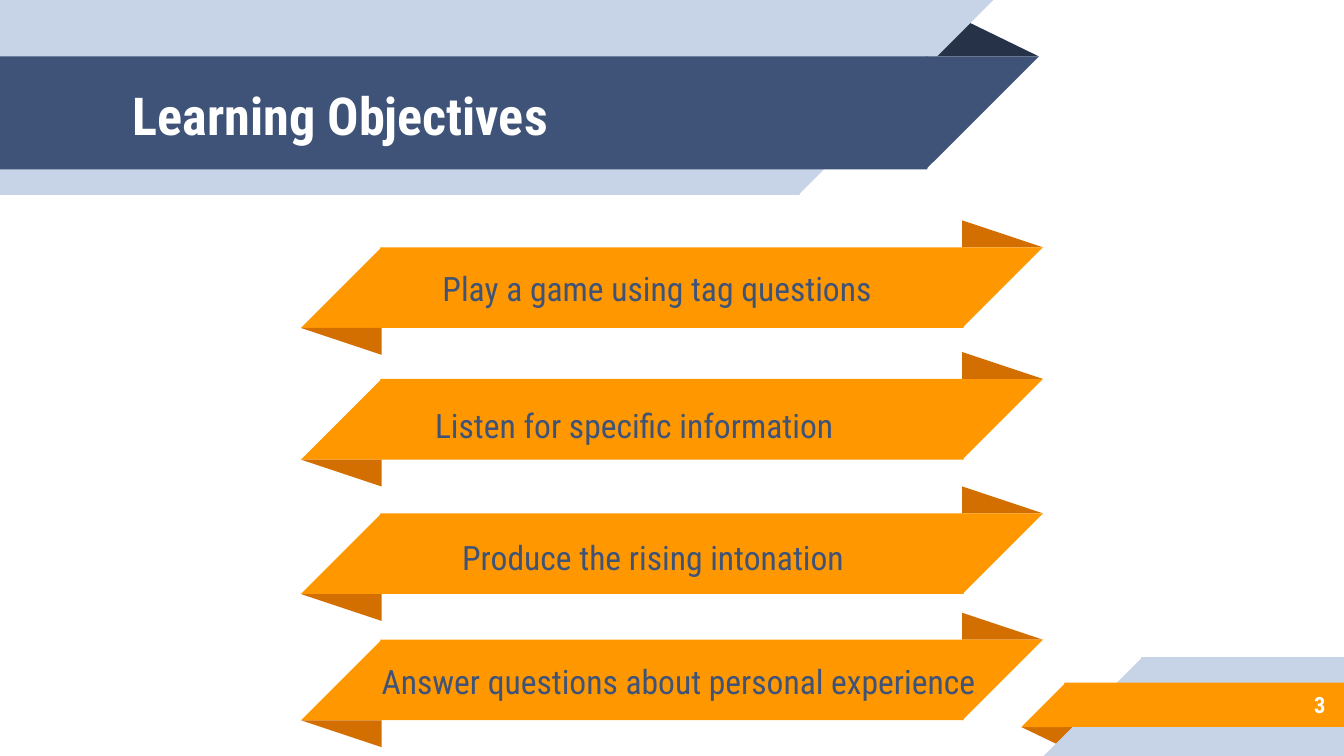
from pptx import Presentation
from pptx.dml.color import RGBColor
from pptx.enum.shapes import MSO_SHAPE as SHAPE
from pptx.enum.text import MSO_ANCHOR as ANCHOR, PP_ALIGN as ALIGN
from pptx.util import Inches, Pt

COLORS = {
    "navy": "3F5378",
    "dark_navy": "263248",
    "pale_blue": "C7D3E6",
    "orange": "FF9800",
    "dark_orange": "D26F00",
    "white": "FFFFFF",
}
FONT = "Roboto Condensed"

SLIDE_WIDTH = 10
SLIDE_HEIGHT = SLIDE_WIDTH * 9 / 16
RIBBON_LEFT = 2.24
RIBBON_WIDTH = 5.52
RIBBON_HEIGHT = 0.6
FOLD_HEIGHT = 0.2
OVERLAP = 0.01

OBJECTIVES = [
    ("Play a game using tag questions", 1.84, (2.75, 1.92, 4.28, 0.45)),
    ("Listen for specific information", 2.82, (2.58, 2.94, 4.28, 0.45)),
    ("Produce the rising intonation", 3.82, (2.72, 3.92, 4.28, 0.45)),
    ("Answer questions about personal experience", 4.76, (2.64, 4.84, 4.82, 0.45)),
]


def rgb(color):
    return RGBColor.from_string(COLORS[color])


def add_block(shapes, kind, box, color, rotation=0, flip=False):
    sp = shapes.add_shape(kind, *map(Inches, box))
    sp.shadow.inherit = False
    sp.fill.solid()
    sp.fill.fore_color.rgb = rgb(color)
    sp.line.fill.background()
    sp.rotation = rotation
    if flip:
        sp._element.spPr.xfrm.set("flipH", "1")
    return sp


def add_fold(shapes, box, color, apex=0, rotation=0):
    sp = add_block(shapes, SHAPE.ISOSCELES_TRIANGLE, box, color, rotation)
    sp.adjustments[0] = apex


def add_right_slant(shapes, left, top, size, color):
    add_block(shapes, SHAPE.RIGHT_TRIANGLE, (left, top, size, size), color, 180, True)


def add_left_slant(shapes, left, top, size, color):
    add_block(shapes, SHAPE.RIGHT_TRIANGLE, (left, top, size, size), color, 0, True)


def add_text(slide, text, box, size, color, align=ALIGN.LEFT, bold=False, before=0, after=0):
    tf = slide.shapes.add_textbox(*map(Inches, box)).text_frame
    tf.word_wrap = True
    tf.vertical_anchor = ANCHOR.MIDDLE
    tf.margin_left = tf.margin_right = tf.margin_top = tf.margin_bottom = Inches(0.1)
    tf.text = text
    p = tf.paragraphs[0]
    p.alignment = align
    p.space_before, p.space_after = Pt(before), Pt(after)
    font = p.runs[0].font
    font.name, font.size, font.bold = FONT, Pt(size), bold
    font.color.rgb = rgb(color)


def add_header(slide):
    shapes = slide.shapes.add_group_shape().shapes
    add_fold(shapes, (6.88, 0.14, 0.85, 0.28), "dark_navy", 0.324)
    for top, width, height, color in [(0, 5.94, 1.45, "pale_blue"), (0.42, 6.89, 0.84, "navy")]:
        add_block(shapes, SHAPE.RECTANGLE, (0, top, width + OVERLAP, height), color)
        add_right_slant(shapes, width, top, height, color)
    add_text(slide, "Learning Objectives", (0.89, 0.43, 3.72, 0.84), 28, "white", bold=True)


def add_footer(slide):
    shapes = slide.shapes.add_group_shape().shapes
    add_fold(shapes, (7.6, 5.41, 0.43, 0.14), "dark_orange", 0.324, 180)
    bands = [
        (8.5, 4.89, SLIDE_HEIGHT - 4.89, "pale_blue"),
        (7.93, 5.08, 0.33, "orange"),
    ]
    for left, top, height, color in bands:
        body = (left - OVERLAP, top, SLIDE_WIDTH - left + OVERLAP, height)
        add_block(shapes, SHAPE.RECTANGLE, body, color)
        add_left_slant(shapes, left - height, top, height, color)
    add_text(slide, "3", (8.33, 5.07, 1.63, 0.35), 12, "white", ALIGN.RIGHT, True)


def add_ribbon(slide, top):
    shapes = slide.shapes.add_group_shape().shapes
    size = RIBBON_HEIGHT
    right = RIBBON_LEFT + RIBBON_WIDTH - size
    body_left = RIBBON_LEFT + size - OVERLAP
    body = (body_left, top, right - body_left + OVERLAP, size)
    add_fold(shapes, (right, top - FOLD_HEIGHT, size, FOLD_HEIGHT), "dark_orange")
    add_block(shapes, SHAPE.RECTANGLE, body, "orange")
    add_right_slant(shapes, right, top, size, "orange")
    add_left_slant(shapes, RIBBON_LEFT, top, size, "orange")
    add_fold(shapes, (RIBBON_LEFT, top + size, size, FOLD_HEIGHT), "dark_orange", rotation=180)


def main():
    prs = Presentation()
    prs.slide_width, prs.slide_height = Inches(SLIDE_WIDTH), Inches(SLIDE_HEIGHT)
    slide = prs.slides.add_slide(prs.slide_layouts[6])
    add_header(slide)
    add_footer(slide)
    for text, top, box in OBJECTIVES:
        add_ribbon(slide, top)
        add_text(slide, text, box, 18, "navy", ALIGN.CENTER, before=6, after=10)
    prs.save("out.pptx")


if __name__ == "__main__":
    main()
